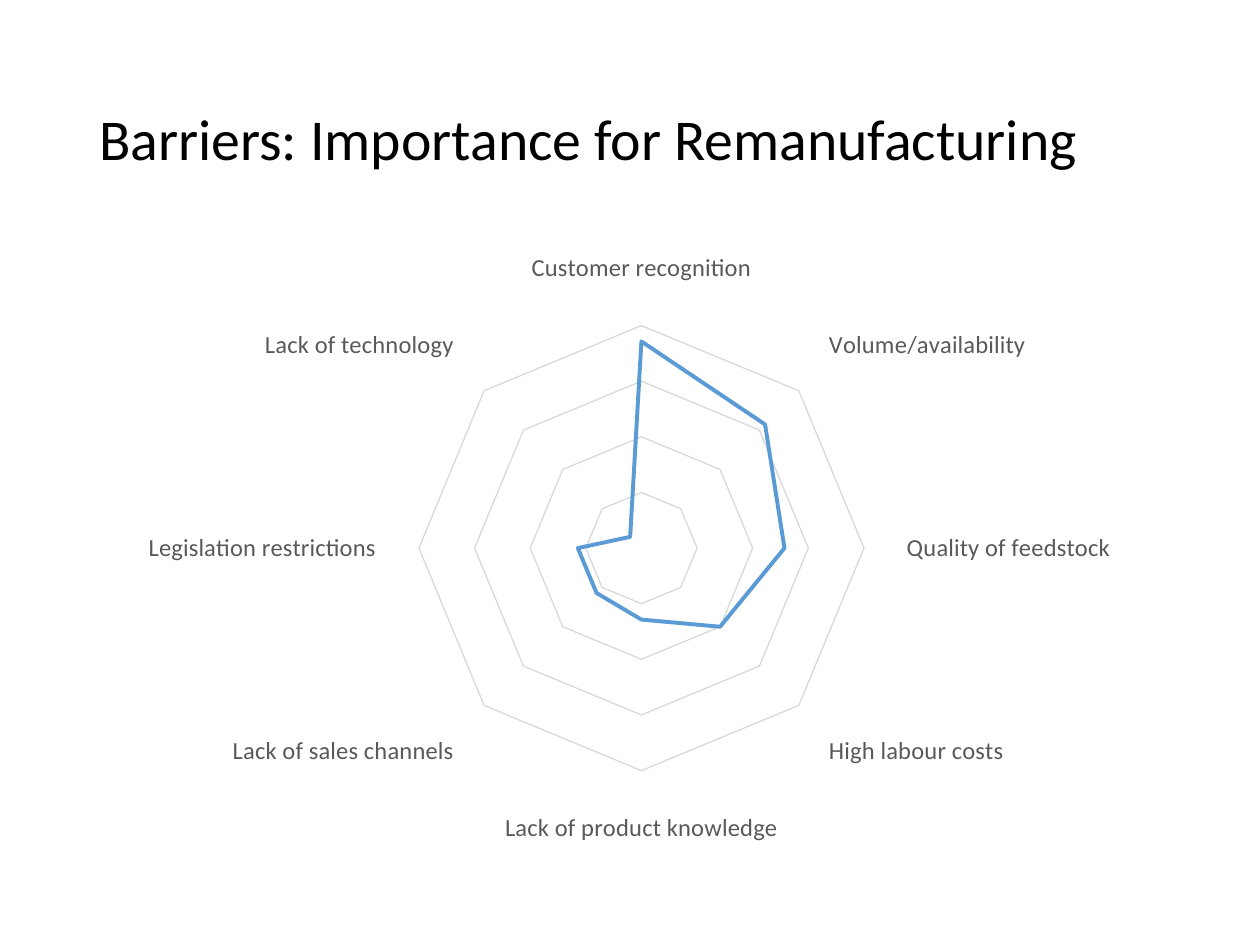
from pptx import Presentation
from pptx.chart.data import CategoryChartData
from pptx.dml.color import RGBColor
from pptx.enum.chart import XL_CHART_TYPE, XL_MARKER_STYLE, XL_TICK_MARK
from pptx.enum.text import MSO_ANCHOR
from pptx.util import Cm, Pt

TITLE = "Barriers: Importance for Remanufacturing"
BARRIERS = [
    ("Customer recognition", 100),
    ("Volume/availability", 96),
    ("Quality of feedstock", 92),
    ("High labour costs", 88),
    ("Lack of product knowledge", 83),
    ("Lack of sales channels", 82),
    ("Legislation restrictions", 82),
    ("Lack of technology", 76),
]
SCALE_START, RING_STEP, RING_COUNT = 74, 7, 4

FONT = "Calibri"
BLACK = RGBColor(0x00, 0x00, 0x00)
LABEL_GREY = RGBColor(0x59, 0x59, 0x59)
RING_GREY = RGBColor(0xD9, 0xD9, 0xD9)
SERIES_BLUE = RGBColor(0x5B, 0x9B, 0xD5)


def set_font(font, size, color):
    font.name = FONT
    font.size = Pt(size)
    font.color.rgb = color


def set_line(line, width, color):
    line.color.rgb = color
    line.width = Pt(width)


def add_title(page):
    box = page.shapes.add_textbox(Cm(1.75), Cm(1.02), Cm(21.9), Cm(3.68))
    frame = box.text_frame
    frame.word_wrap = True
    frame.vertical_anchor = MSO_ANCHOR.MIDDLE
    para = frame.paragraphs[0]
    para.line_spacing = 0.9
    span = para.add_run()
    span.text = TITLE
    set_font(span.font, 33, BLACK)


def add_radar(page):
    data = CategoryChartData()
    data.categories = [name for name, _ in BARRIERS]
    data.add_series("Series 1", [score for _, score in BARRIERS])
    chart = page.shapes.add_chart(
        XL_CHART_TYPE.RADAR, Cm(2.59), Cm(4.32), Cm(20.2), Cm(13.46), data
    ).chart
    chart.has_legend = False
    chart.has_title = False
    set_font(chart.font, 10, BLACK)

    labels = chart.category_axis
    labels.has_major_gridlines = False
    labels.major_tick_mark = XL_TICK_MARK.NONE
    labels.minor_tick_mark = XL_TICK_MARK.NONE
    set_font(labels.tick_labels.font, 14, LABEL_GREY)
    set_line(labels.format.line, 0.75, RING_GREY)

    rings = chart.value_axis
    rings.visible = False
    rings.minimum_scale = SCALE_START
    rings.maximum_scale = SCALE_START + RING_STEP * RING_COUNT
    rings.major_unit = RING_STEP
    rings.has_major_gridlines = True
    set_line(rings.major_gridlines.format.line, 0.75, RING_GREY)

    plot = chart.plots[0]
    plot.vary_by_categories = False
    series = plot.series[0]
    series.smooth = False
    series.marker.style = XL_MARKER_STYLE.NONE
    set_line(series.format.line, 2.25, SERIES_BLUE)


def main():
    deck = Presentation()
    deck.slide_width, deck.slide_height = Cm(25.4), Cm(19.05)
    page = deck.slides.add_slide(deck.slide_layouts[6])
    add_title(page)
    add_radar(page)
    deck.save("out.pptx")


if __name__ == "__main__":
    main()
